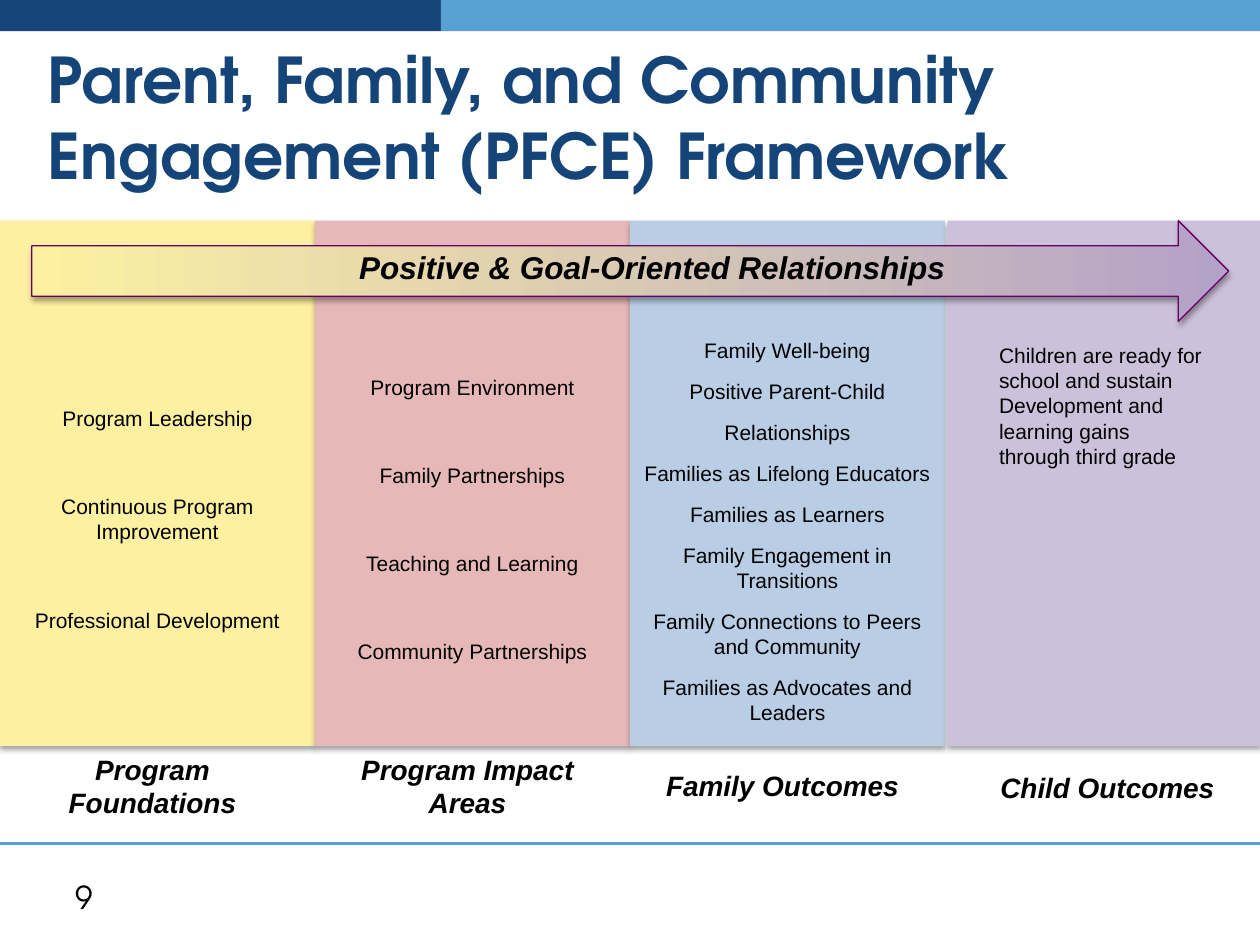
from lxml import etree
from pptx import Presentation
from pptx.dml.color import RGBColor
from pptx.enum.shapes import MSO_CONNECTOR, MSO_SHAPE as Shape
from pptx.enum.text import MSO_ANCHOR as Anchor, PP_ALIGN as Align
from pptx.oxml import parse_xml
from pptx.oxml.ns import nsdecls, qn
from pptx.util import Cm, Pt

SLIDE_W, SLIDE_H = 25.4, 19.05
NAVY, SKY, BLACK, PURPLE = "154578", "56A0D3", "000000", "660066"
HEADING_FONT, BODY_FONT = "TeX Gyre Adventor", "Arial"
COLUMN_W, COLUMN_H, COLUMN_TOP = 6.35, 10.59, 4.45

# Text places are offsets from the column: left, top, width, height
COLUMNS = [
    dict(left=0, width=COLUMN_W, fill="FDF0A1",
         items=["Program Leadership", "Continuous Program Improvement",
                "Professional Development"],
         items_box=(0, 3.6, COLUMN_W, 4.88), after=36,
         caption="Program Foundations", caption_box=(0, 10.59, 6.15, 1.63)),
    dict(left=COLUMN_W, width=COLUMN_W, fill="E6B9B8",
         items=["Program Environment", "Family Partnerships",
                "Teaching and Learning", "Community Partnerships"],
         items_box=(0, 2.97, COLUMN_W, 6.15), after=36,
         caption="Program Impact Areas", caption_box=(0, 10.59, 6.15, 1.63)),
    dict(left=2 * COLUMN_W, width=COLUMN_W, fill="B9CDE5",
         items=["Family Well-being", "Positive Parent-Child", "Relationships",
                "Families as Lifelong Educators", "Families as Learners",
                "Family Engagement in Transitions",
                "Family Connections to Peers and Community",
                "Families as Advocates and Leaders"],
         items_box=(0, 2.23, COLUMN_W, 8.15), before=9,
         caption="Family Outcomes", caption_box=(0, 10.92, 6.15, 0.94)),
    dict(left=19.1, width=6.3, fill="CCC1DA",
         items=["Children are ready for school and sustain",
                "Development and learning gains through third grade"],
         items_box=(0.79, 2.33, 4.65, 2.82), align=Align.LEFT,
         caption="Child Outcomes", caption_box=(0.15, 10.95, 6.15, 0.94)),
]


def rgb(hex_color):
    return RGBColor.from_string(hex_color)


def add_block(slide, kind, box, fill=None):
    block = slide.shapes.add_shape(kind, *map(Cm, box))
    block.shadow.inherit = False
    block.line.fill.background()
    if fill:
        block.fill.solid()
        block.fill.fore_color.rgb = rgb(fill)
    return block


def add_soft_shadow(block):
    effects = block._element.spPr.find(qn("a:effectLst"))
    effects.append(parse_xml(
        f'<a:outerShdw {nsdecls("a")} blurRad="{Pt(3.1)}" dist="{Pt(1.8)}" '
        'dir="5400000" rotWithShape="0"><a:srgbClr val="000000">'
        '<a:alpha val="35000"/></a:srgbClr></a:outerShdw>'))


def add_text(slide, box, lines, size, font=BODY_FONT, color=BLACK, bold=False,
             italic=False, align=Align.LEFT, anchor=Anchor.TOP, before=0,
             after=0, wrap=True):
    frame = slide.shapes.add_textbox(*map(Cm, box)).text_frame
    frame.word_wrap = wrap
    frame.vertical_anchor = anchor
    frame.text = "\n".join(lines)
    for index, paragraph in enumerate(frame.paragraphs):
        paragraph.alignment = align
        paragraph.space_before = Pt(before if index else 0)
        paragraph.space_after = Pt(after)
        for run in paragraph.runs:
            run.font.name, run.font.size = font, Pt(size)
            run.font.bold, run.font.italic = bold, italic
            run.font.color.rgb = rgb(color)


def add_header(slide, left, top, width):
    # Two-colour band and title
    split = 8.89
    add_block(slide, Shape.RECTANGLE, (left, top, split, 0.63), NAVY)
    add_block(slide, Shape.RECTANGLE,
              (left + split, top, width - split, 0.63), SKY)
    add_text(slide, (left + 0.71, top + 0.76, 23.85, 3.18),
             ["Parent, Family, and Community Engagement (PFCE) Framework"],
             36, HEADING_FONT, NAVY, bold=True, anchor=Anchor.MIDDLE)


def add_column_text(slide, top, column):
    def place(box):
        x, y, width, height = box
        return column["left"] + x, top + y, width, height

    add_text(slide, place(column["items_box"]), column["items"], 12,
             align=column.get("align", Align.CENTER),
             before=column.get("before", 0), after=column.get("after", 0))
    add_text(slide, place(column["caption_box"]), [column["caption"]], 16,
             bold=True, italic=True, align=Align.CENTER)


def add_relationships_arrow(slide, left, top, width, height):
    arrow = add_block(slide, Shape.RIGHT_ARROW, (left, top, width, height))
    arrow.fill.gradient()
    arrow.fill.gradient_angle = 0
    for stop, color in zip(arrow.fill.gradient_stops, ("FDF0A1", "B3A2C7")):
        stop.color.rgb = rgb(color)
    arrow.line.color.rgb = rgb(PURPLE)
    arrow.line.width = Pt(0.75)
    add_soft_shadow(arrow)
    add_text(slide, (left + 6.35, top + 0.43, 12.6, 1.02),
             ["Positive & Goal-Oriented Relationships"], 18,
             bold=True, italic=True, wrap=False)


def add_framework(slide, top):
    for column in COLUMNS:
        panel = add_block(slide, Shape.RECTANGLE,
                          (column["left"], top, column["width"], COLUMN_H),
                          column["fill"])
        add_soft_shadow(panel)
    add_relationships_arrow(slide, 0.64, top, 24.13, 2.03)
    for column in COLUMNS:
        add_column_text(slide, top, column)


def add_footer(slide, left, top, width):
    # Rule and slide number
    rule = slide.shapes.add_connector(MSO_CONNECTOR.STRAIGHT, Cm(left), Cm(top),
                                      Cm(left + width), Cm(top))
    rule.line.color.rgb = rgb(SKY)
    rule.line.width = Pt(1.5)
    etree.SubElement(rule._element.spPr, qn("a:effectLst"))
    add_text(slide, (left + 1.27, top + 0.58, 5.92, 1.02), ["9"], 18,
             HEADING_FONT, anchor=Anchor.MIDDLE)


def main():
    deck = Presentation()
    deck.slide_width, deck.slide_height = Cm(SLIDE_W), Cm(SLIDE_H)
    slide = deck.slides.add_slide(deck.slide_layouts[6])
    add_header(slide, 0, 0, SLIDE_W)
    add_framework(slide, COLUMN_TOP)
    add_footer(slide, 0, 17, SLIDE_W)
    deck.save("out.pptx")


if __name__ == "__main__":
    main()
